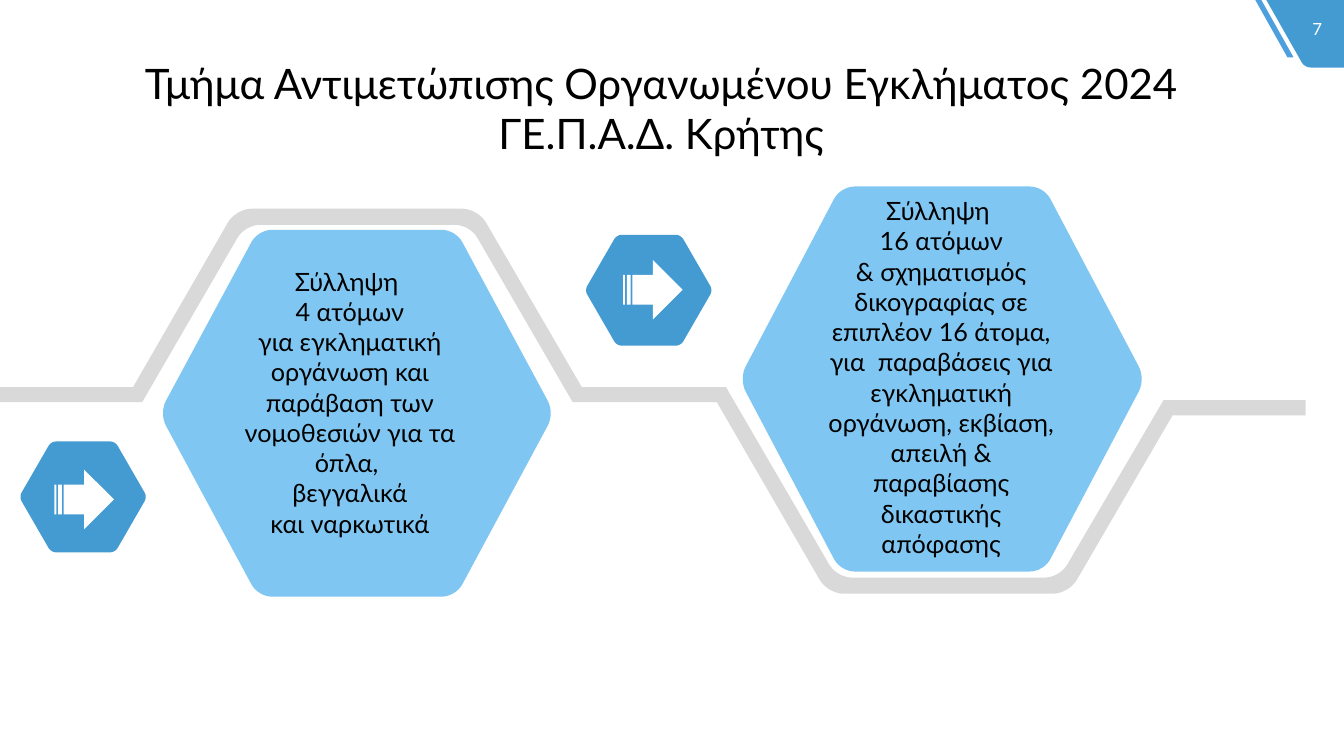
from lxml import etree
from pptx import Presentation
from pptx import util as u
from pptx.dml.color import RGBColor
from pptx.enum import shapes, text
from pptx.oxml.ns import qn

TITLE = ["Τμήμα Αντιμετώπισης Οργανωμένου Εγκλήματος 2024\nΓΕ.Π.Α.Δ. Κρήτης"]
LEFT_CASE = [
    "Σύλληψη ",
    "4 ατόμων",
    "για εγκληματική οργάνωση και παράβαση των νομοθεσιών για τα όπλα, ",
    "βεγγαλικά",
    "και ναρκωτικά",
]
RIGHT_CASE = [
    "Σύλληψη ",
    "16 ατόμων",
    "& σχηματισμός δικογραφίας σε επιπλέον 16 άτομα, για  παραβάσεις για "
    "εγκληματική οργάνωση, εκβίαση, απειλή & παραβίασης δικαστικής απόφασης",
]
BLUE, LIGHT, STRIPE, GREY = "1483C7", "60B9EF", "4D9FDD", "D9D9D9"
BADGE = [(12.56, 0, 0), (13.33, 0, 0), (13.33, 0.67, 0), (12.94, 0.67, 0.06)]
BADGE_STRIPE = [(12.45, 0, 0), (12.51, 0, 0), (12.83, 0.57, 0), (12.77, 0.57, 0)]
BAND = [
    (0, 3.84, 0), (1.32, 3.84, 0), (2.34, 2.07, 0.16), (4.74, 2.07, 0.16),
    (5.77, 3.84, 0), (7.2, 3.84, 0), (8.3, 5.73, 0.15), (10.51, 5.73, 0.15),
    (11.54, 3.97, 0), (12.95, 3.97, 0), (12.95, 4.12, 0), (11.63, 4.12, 0),
    (10.6, 5.89, 0.16), (8.21, 5.89, 0.16), (7.11, 3.99, 0), (5.68, 3.99, 0),
    (4.66, 2.23, 0.15), (2.43, 2.23, 0.15), (1.41, 3.99, 0), (0, 3.99, 0),
]
CASES = [
    ((1.58, 2.28, 3.92, 3.64), LEFT_CASE, (2.29, 2.59, 2.36, 2.83)),
    ((7.33, 1.85, 4.03, 3.82), RIGHT_CASE, (8.05, 1.89, 2.57, 3.74)),
]
MARKERS = [((0.19, 4.38, 1.27, 1.1), (0.54, 4.66)),
           ((5.8, 2.33, 1.27, 1.1), (6.18, 2.58))]
ARROW_SIZE = 0.59

prs = Presentation()
prs.slide_width, prs.slide_height = u.Inches(13.33), u.Inches(7.5)
s = prs.slides.add_slide(prs.slide_layouts[6])


def paint(sp, color, alpha=100):
    sp.shadow.inherit = False
    sp.line.fill.background()
    sp.fill.solid()
    sp.fill.fore_color.rgb = RGBColor.from_string(color)
    if alpha < 100:
        clr = sp._element.spPr.find(".//" + qn("a:srgbClr"))
        etree.SubElement(clr, qn("a:alpha"), val=str(alpha * 1000))


def toward(start, end, share):
    return tuple(a + (b - a) * share for a, b in zip(start, end))


def round_corner(before, corner, after, cut, steps=8):
    if not cut:
        return [corner]
    ends = []
    for other in (before, after):
        length = sum((a - b) ** 2 for a, b in zip(corner, other)) ** 0.5
        ends.append(toward(corner, other, cut / length))
    p0, p3 = ends
    p1, p2 = toward(p0, corner, 0.58), toward(p3, corner, 0.58)
    points = []
    for i in range(steps + 1):
        t = i / steps
        weights = ((1 - t) ** 3, 3 * t * (1 - t) ** 2, 3 * t * t * (1 - t), t ** 3)
        points.append(tuple(sum(w * c for w, c in zip(weights, axis))
                            for axis in zip(p0, p1, p2, p3)))
    return points


def outline(corners, color, alpha=100):
    points = []
    for i, (x, y, cut) in enumerate(corners):
        after = corners[(i + 1) % len(corners)]
        points += round_corner(corners[i - 1][:2], (x, y), after[:2], cut)
    emu = [(u.Inches(x), u.Inches(y)) for x, y in points]
    fb = s.shapes.build_freeform(*emu[0])
    fb.add_line_segments(emu[1:], close=True)
    paint(fb.convert_to_shape(), color, alpha)


def hexagon(box, cut, color):
    x, y, w, h = box
    spots = [(0, 0.5), (0.25, 0), (0.75, 0), (1, 0.5), (0.75, 1), (0.25, 1)]
    outline([(x + w * a, y + h * b, cut) for a, b in spots], color, 80)


def add_text(lines, box, size=18, color="000000", wrap=True):
    tf = s.shapes.add_textbox(*map(u.Inches, box)).text_frame
    tf.word_wrap = wrap
    tf.auto_size = text.MSO_AUTO_SIZE.SHAPE_TO_FIT_TEXT
    for i, line in enumerate(lines):
        p = tf.add_paragraph() if i else tf.paragraphs[0]
        p.text = line
        p.alignment = text.PP_ALIGN.CENTER
        for r in p.runs:
            r.font.name, r.font.size = "Lato", u.Pt(size)
            r.font.color.rgb = RGBColor.from_string(color)


outline(BADGE, BLUE, 80)
outline(BADGE_STRIPE, STRIPE)
add_text(["7"], (12.86, 0.14, 0.41, 0.3), size=12, color="FFFFFF", wrap=False)
add_text(TITLE, (1.26, 0.52, 10.6, 1.11), size=30, wrap=False)
outline(BAND, GREY)
for box, lines, text_box in CASES:
    hexagon(box, 0.14, LIGHT)
    add_text(lines, text_box)
for box, (x, y) in MARKERS:
    hexagon(box, 0.05, BLUE)
    arrow = s.shapes.add_shape(shapes.MSO_SHAPE.STRIPED_RIGHT_ARROW,
                               *map(u.Inches, (x, y, ARROW_SIZE, ARROW_SIZE)))
    paint(arrow, "FFFFFF")

prs.save("out.pptx")
